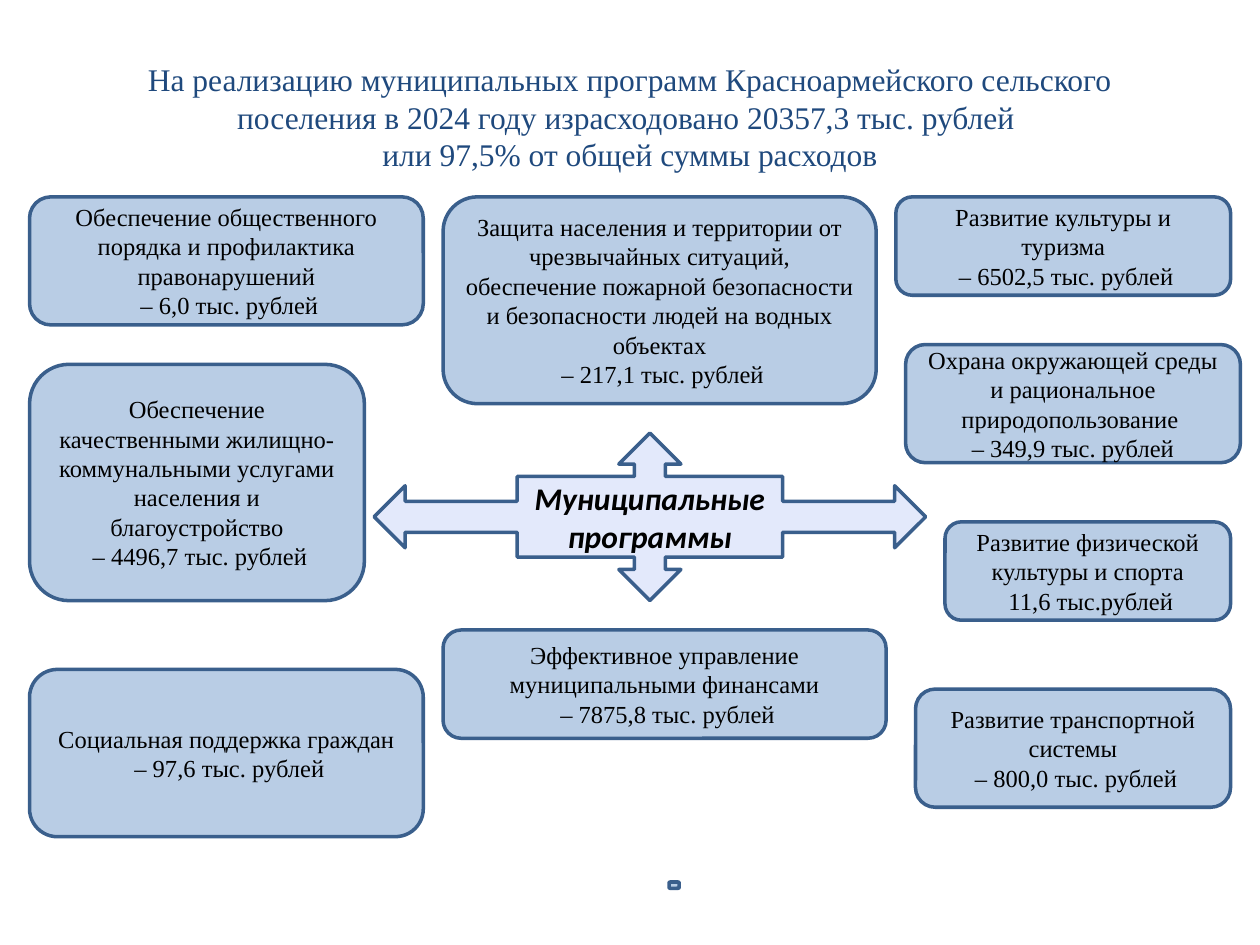
from dataclasses import dataclass

from pptx import Presentation
from pptx import util as u
from pptx.dml.color import RGBColor
from pptx.enum import shapes, text

Pt = u.Pt
NAVY = RGBColor(0x1F, 0x49, 0x7D)
EDGE = RGBColor(0x3A, 0x5F, 0x8C)
BLUE = RGBColor(0xB9, 0xCD, 0xE5)
PALE = RGBColor(0xE3, 0xE9, 0xFB)
BLACK = RGBColor(0, 0, 0)
SERIF = "Times New Roman"
SANS = "Calibri"


@dataclass(frozen=True)
class Box:
    """Position and size in points."""
    x: float
    y: float
    w: float
    h: float


@dataclass(frozen=True)
class Card:
    box: Box
    name: str
    cost: str


@dataclass(frozen=True)
class Style:
    face: str
    size: float
    color: RGBColor
    strong: bool = False


HEAD = Style(SERIF, 18, NAVY)
BODY = Style(SERIF, 14, BLACK)
HUB = Style(SANS, 18, BLACK, True)

# Column edges and top row shared by the cards
LEFT, MID, RIGHT, TOP = 16.9, 253.2, 703.2, 112.5

CARDS = [
    Card(Box(LEFT, TOP, 225, 73.2),
         "Обеспечение общественного порядка и профилактика правонарушений",
         " – 6,0 тыс. рублей"),
    Card(Box(LEFT, 208.2, 191.3, 135),
         "Обеспечение качественными жилищно-коммунальными услугами "
         "населения и благоустройство",
         " – 4496,7 тыс. рублей"),
    Card(Box(RIGHT - 180, 393.8, 180, 67.5),
         "Развитие транспортной системы", " – 800,0 тыс. рублей"),
    Card(Box(LEFT, 382.5, 225, 95.6),
         "Социальная поддержка граждан", " – 97,6 тыс. рублей"),
    Card(Box(MID, 360, 253.2, 61.9),
         "Эффективное управление муниципальными финансами",
         " – 7875,8 тыс. рублей"),
    Card(Box(RIGHT - 163.2, 298.2, 163.2, 56.2),
         "Развитие физической культуры и спорта", " 11,6 тыс.рублей"),
    Card(Box(517.5, 196.9, 191.3, 67.5),
         "Охрана окружающей среды и рациональное природопользование ",
         "– 349,9 тыс. рублей"),
    Card(Box(MID, TOP, 247.5, 118.2),
         "Защита населения и территории от чрезвычайных ситуаций, обеспечение "
         "пожарной безопасности и безопасности людей на водных объектах",
         " – 217,1 тыс. рублей"),
    Card(Box(RIGHT - 191.3, TOP, 191.3, 56.2),
         "Развитие культуры и туризма", " – 6502,5 тыс. рублей"),
]


def place(box: Box) -> list:
    return [Pt(n) for n in (box.x, box.y, box.w, box.h)]


def add_run(para, words: str, style: Style) -> None:
    run = para.add_run()
    run.text = words
    font = run.font
    font.name, font.size = style.face, Pt(style.size)
    font.bold = font.italic = style.strong
    font.color.rgb = style.color


def write(shape, lines: list[str], style: Style) -> None:
    """Write each line as a centred paragraph."""
    frame = shape.text_frame
    frame.word_wrap = True
    frame.vertical_anchor = text.MSO_ANCHOR.MIDDLE
    for i, line in enumerate(lines):
        para = frame.add_paragraph() if i else frame.paragraphs[0]
        para.alignment = text.PP_ALIGN.CENTER
        for j, part in enumerate(line.split("\n")):
            if j:
                para.add_line_break()
            add_run(para, part, style)


def draw(slide, kind, box: Box, fill: RGBColor):
    shape = slide.shapes.add_shape(kind, *place(box))
    shape.shadow.inherit = False
    shape.fill.solid()
    shape.fill.fore_color.rgb = fill
    shape.line.color.rgb = EDGE
    shape.line.width = Pt(2)
    return shape


def main() -> None:
    deck = Presentation()
    deck.slide_width, deck.slide_height = Pt(720), Pt(540)
    slide = deck.slides.add_slide(deck.slide_layouts[6])
    kinds = shapes.MSO_SHAPE

    # Title
    title = slide.shapes.add_textbox(*place(Box(36, 21.6, 648, 90)))
    write(title, ["На реализацию муниципальных программ Красноармейского "
                  "сельского поселения в 2024 году израсходовано "
                  "20357,3 тыс. рублей \nили 97,5% от общей суммы расходов"],
          HEAD)

    # Central arrows
    hub = draw(slide, kinds.QUAD_ARROW_CALLOUT,
               Box(213.8, 247.5, 315.2, 95.7), PALE)
    write(hub, ["Муниципальные программы"], HUB)

    # Programme cards
    for card in CARDS:
        shape = draw(slide, kinds.ROUNDED_RECTANGLE, card.box, BLUE)
        write(shape, [card.name, card.cost], BODY)

    # Small mark at the foot
    draw(slide, kinds.ROUNDED_RECTANGLE, Box(382.3, 504, 5.8, 3.6), BLUE)

    deck.save("out.pptx")


if __name__ == "__main__":
    main()
